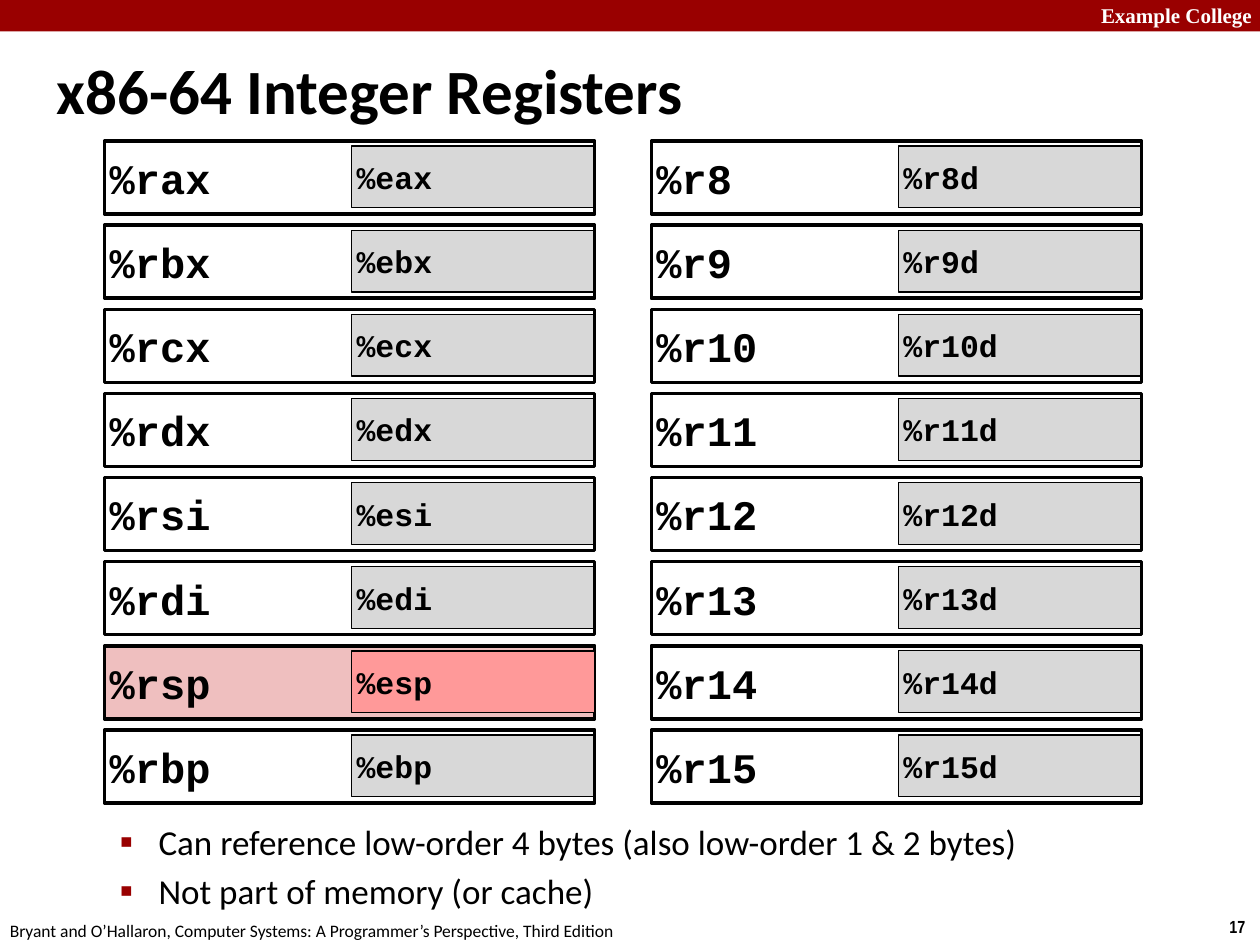
import pptx
import pptx.dml.color
import pptx.enum.shapes
import pptx.enum.text
import pptx.oxml
import pptx.oxml.ns
import pptx.util
from pptx.util import Inches

COLORS = {
    "band": "990000",
    "white": "FFFFFF",
    "ink": "000000",
    "half": "D8D8D8",
    "stack_full": "EFBFBF",
    "stack_half": "FF9999",
}
STACK_POINTER = "%rsp"
LEGACY_REGISTERS = [(f"%r{name}", f"%e{name}")
                    for name in "ax bx cx dx si di sp bp".split()]
NUMBERED_REGISTERS = [(f"%r{n}", f"%r{n}d") for n in range(8, 16)]
REMARKS = [
    "Can reference low-order 4 bytes (also low-order 1 & 2 bytes)",
    "Not part of memory (or cache)",
]


def rgb(name):
    return pptx.dml.color.RGBColor.from_string(COLORS[name])


def style(paragraph, font_name, size, bold=False, color="ink"):
    paragraph.alignment = pptx.enum.text.PP_ALIGN.LEFT
    font = paragraph.font
    font.name = font_name
    font.size = pptx.util.Pt(size)
    font.bold = bold
    font.color.rgb = rgb(color)


def set_indent(paragraph, margin, first_line):
    properties = paragraph._p.get_or_add_pPr()
    properties.set("marL", str(Inches(margin)))
    properties.set("indent", str(Inches(first_line)))
    return properties


def add_box(slide, left, top, width, height, fill=None, line_width=None):
    box = slide.shapes.add_shape(
        pptx.enum.shapes.MSO_SHAPE.RECTANGLE,
        Inches(left), Inches(top), Inches(width), Inches(height))
    box.shadow.inherit = False
    if fill:
        box.fill.solid()
        box.fill.fore_color.rgb = rgb(fill)
    else:
        box.fill.background()
    if line_width:
        box.line.color.rgb = rgb("ink")
        box.line.width = pptx.util.Pt(line_width)
    else:
        box.line.fill.background()
    return box


def add_label(slide, text, left, top, width, height, wrap=False, **font):
    label = slide.shapes.add_textbox(
        Inches(left), Inches(top), Inches(width), Inches(height))
    label.text_frame.word_wrap = wrap
    label.text_frame.text = text
    for paragraph in label.text_frame.paragraphs:
        style(paragraph, **font)
    return label


def add_register_box(slide, name, left, top, width, height, fill, line_width, size):
    frame = add_box(slide, left, top, width, height, fill, line_width).text_frame
    frame.margin_left = frame.margin_right = Inches(0.04)
    frame.margin_top = frame.margin_bottom = Inches(0.04)
    frame.vertical_anchor = pptx.enum.text.MSO_ANCHOR.MIDDLE
    frame.text = name
    style(frame.paragraphs[0], "Courier New", size, bold=True)


def add_register_column(slide, registers, left, top, width, height):
    pitch = height / len(registers)
    half_left = left + width - 1.93
    for row, (full_name, half_name) in enumerate(registers):
        row_top = top + row * pitch
        highlighted = full_name == STACK_POINTER
        full = (full_name, left, row_top, width, 0.58,
                "stack_full" if highlighted else None, 2, 24)
        half = (half_name, half_left, row_top + 0.04, 1.93, 0.49,
                "stack_half" if highlighted else "half",
                1 if highlighted else 0.75, 18)
        # A filled full register lies behind its half, an open one frames it
        for part in ((full, half) if highlighted else (half, full)):
            add_register_box(slide, *part)


def add_header_and_footer(slide):
    add_box(slide, 0, 0, 10, 0.25, "band")
    add_label(slide, "Example College", 8.64, -0.03, 1.43, 0.3,
              font_name="Times New Roman", size=12, bold=True, color="white")
    add_label(slide, "17", 9.66, 7.22, 0.34, 0.27,
              font_name="Arial Narrow", size=10, bold=True)
    add_label(slide, "Bryant and O’Hallaron, Computer Systems: "
              "A Programmer’s Perspective, Third Edition",
              -0.02, 7.25, 5.08, 0.27, font_name="Calibri", size=10)


def place_title(slide, left, top, width, height):
    title = slide.shapes.title
    title.left, title.top = Inches(left), Inches(top)
    title.width, title.height = Inches(width), Inches(height)
    frame = title.text_frame
    frame.text = "x86-64 Integer Registers"
    frame.auto_size = pptx.enum.text.MSO_AUTO_SIZE.NONE
    frame.vertical_anchor = pptx.enum.text.MSO_ANCHOR.MIDDLE
    style(frame.paragraphs[0], "Calibri", 36, bold=True)
    set_indent(frame.paragraphs[0], 0.13, -0.13)


def add_remarks(slide, left, top, width, height):
    remarks = add_label(slide, "\n".join(REMARKS), left, top, width, height,
                        wrap=True, font_name="Calibri", size=20)
    namespace = pptx.oxml.ns.nsdecls("a")
    bullet = (
        f'<a:buClr {namespace}><a:srgbClr val="{COLORS["band"]}"/></a:buClr>',
        f'<a:buSzPct {namespace} val="110000"/>',
        f'<a:buFont {namespace} typeface="Arial"/>',
        f'<a:buChar {namespace} char="▪"/>',
    )
    for paragraph in remarks.text_frame.paragraphs:
        paragraph.space_before = pptx.util.Pt(4)
        properties = set_indent(paragraph, 0.81, -0.31)
        # Bullet elements come after the spacing and before the run defaults
        defaults = properties.find(pptx.oxml.ns.qn("a:defRPr"))
        for xml in bullet:
            defaults.addprevious(pptx.oxml.parse_xml(xml))


def main():
    presentation = pptx.Presentation()
    presentation.slide_width = Inches(10)
    presentation.slide_height = Inches(7.5)
    slide = presentation.slides.add_slide(presentation.slide_layouts[5])

    add_header_and_footer(slide)
    place_title(slide, 0.35, 0.29, 8.3, 0.83)
    add_register_column(slide, LEGACY_REGISTERS, 0.83, 1.12, 3.89, 5.34)
    add_register_column(slide, NUMBERED_REGISTERS, 5.17, 1.12, 3.89, 5.34)
    add_remarks(slide, 0.35, 6.46, 8.02, 0.92)

    presentation.save("out.pptx")


if __name__ == "__main__":
    main()
